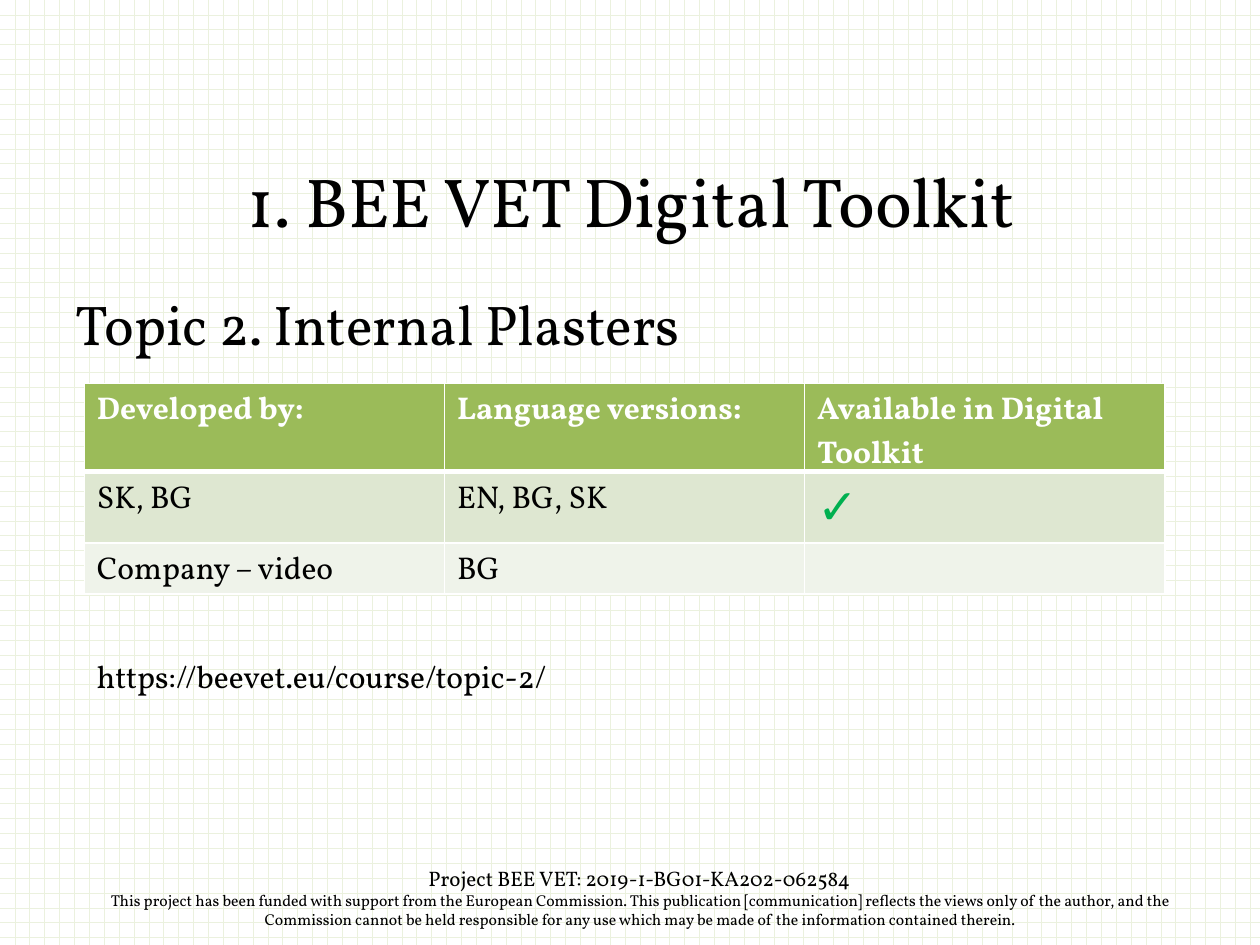
from lxml import etree
from pptx import Presentation
from pptx import util as u
from pptx.dml.color import RGBColor
from pptx.enum import dml, text
from pptx.oxml import ns

FACE = "Vollkorn"
GREEN, WHITE, BLACK = "9BBB59", "FFFFFF", "000000"


def hue(code):
    return RGBColor.from_string(code)


def style(para, size, color=BLACK, bold=False, align=text.PP_ALIGN.LEFT):
    para.alignment = align
    font = para.font
    font.name, font.size, font.bold = FACE, u.Pt(size), bold
    font.color.rgb = hue(color)


def write(frame, lines, wrap=True, **look):
    frame.word_wrap = wrap
    for i, (line, size) in enumerate(lines):
        para = frame.add_paragraph() if i else frame.paragraphs[0]
        para.text = line
        style(para, size, **look)


def label(slide, box, lines, **look):
    shape = slide.shapes.add_textbox(*map(u.Cm, box))
    write(shape.text_frame, lines, **look)


def paint(slide):
    fill = slide.background.fill
    fill.patterned()
    fill.pattern = dml.MSO_PATTERN.HORIZONTAL_BRICK
    fill.fore_color.rgb = hue("EBF1DE")
    fill.back_color.rgb = hue(WHITE)


def head(slide, box, line):
    title = slide.shapes.title
    title.left, title.top, title.width, title.height = map(u.Cm, box)
    frame = title.text_frame
    frame.auto_size = text.MSO_AUTO_SIZE.NONE
    frame.vertical_anchor = text.MSO_ANCHOR.MIDDLE
    write(frame, [(line, 39.6)], align=text.PP_ALIGN.CENTER)


def edge(cell, base):
    props = cell._tc.get_or_add_tcPr()
    widths = {"lnL": 1, "lnR": 1, "lnT": 1, "lnB": base}
    for i, (side, width) in enumerate(widths.items()):
        line = etree.Element(ns.qn("a:" + side), w=str(u.Pt(width)))
        fill = etree.SubElement(line, ns.qn("a:solidFill"))
        etree.SubElement(fill, ns.qn("a:srgbClr"), val=WHITE)
        props.insert(i, line)


def grid(slide, box, rows):
    fills = [GREEN, "DEE7D1", "EFF3EA"]
    shape = slide.shapes.add_table(len(rows), len(rows[0]), *map(u.Cm, box))
    table = shape.table
    for r, row in enumerate(rows):
        for c, line in enumerate(row):
            cell = table.cell(r, c)
            cell.fill.solid()
            cell.fill.fore_color.rgb = hue(fills[r])
            edge(cell, 1 if r else 3)
            tick = line == "✓"
            color = "00B050" if tick else BLACK if r else WHITE
            size = 28 if tick else 18
            write(cell.text_frame, [(line, size)], color=color, bold=r == 0)


def main():
    deck = Presentation()
    deck.slide_width, deck.slide_height = u.Cm(25.4), u.Cm(19.05)
    slide = deck.slides.add_slide(deck.slide_layouts[5])
    paint(slide)
    label(slide, (1.3, 17.32, 23.19, 1.55), [
        ("Project BEE VET: 2019-1-BG01-KA202-062584", 12),
        ("This project has been funded with support from the European "
         "Commission. This publication [communication] reflects the views "
         "only of the author, and the Commission cannot be held responsible "
         "for any use which may be made of the information contained "
         "therein.", 9),
    ], align=text.PP_ALIGN.CENTER)
    head(slide, (1.3, 3.12, 22.86, 1.8), "1. BEE VET Digital Toolkit")
    label(slide, (1.27, 5.72, 22.86, 11.3), [("Topic 2. Internal Plasters", 32)])
    grid(slide, (1.7, 7.73, 21.78, 3.07), [
        ["Developed by:", "Language versions:", "Available in Digital Toolkit"],
        ["SK, BG", "EN, BG, SK", "✓"],
        ["Company – video", "BG", ""],
    ])
    label(slide, (1.7, 13.13, 10.57, 1.02),
          [("https://beevet.eu/course/topic-2/", 18)], wrap=False)
    deck.save("out.pptx")


if __name__ == "__main__":
    main()
